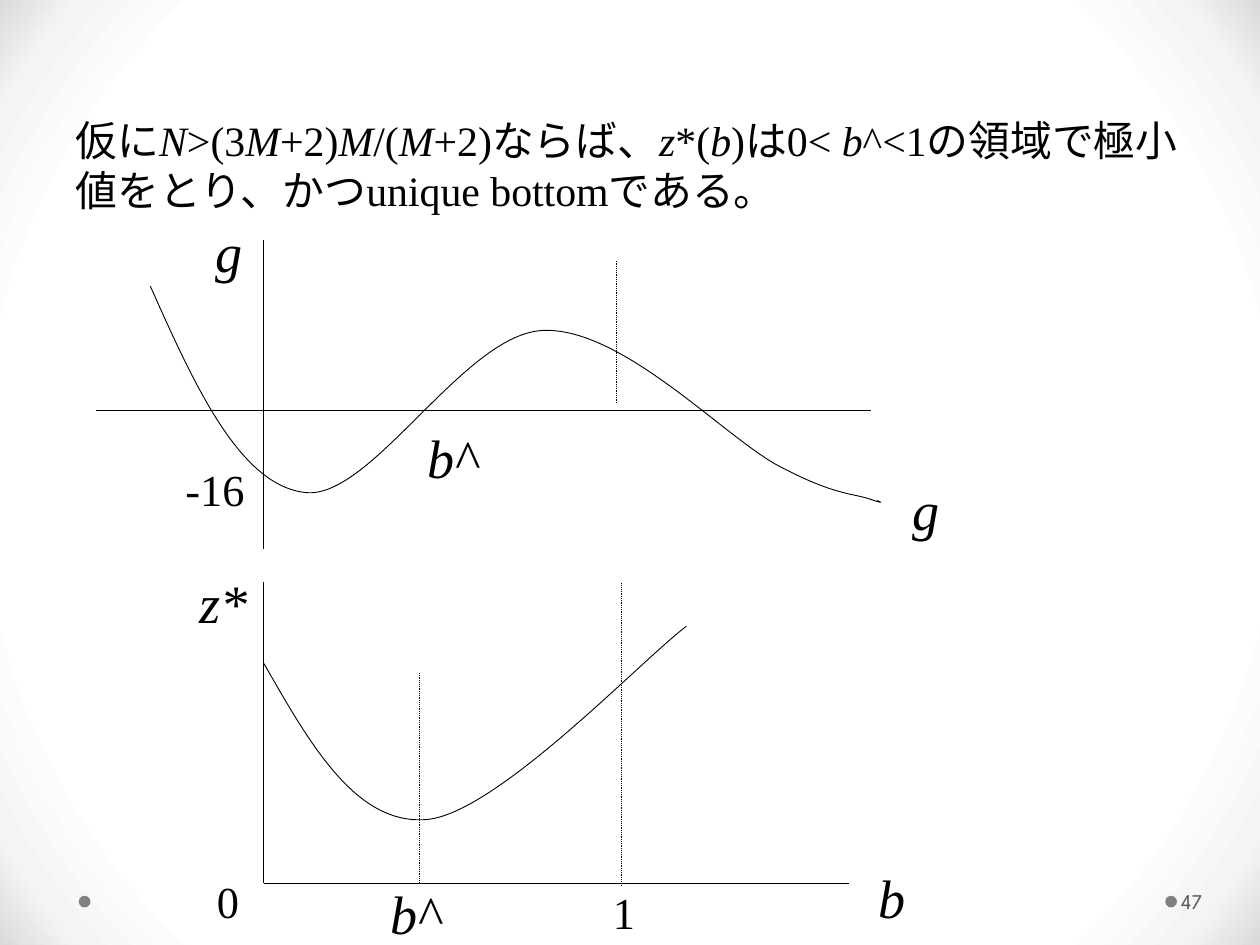
from dataclasses import dataclass

from lxml import etree
from pptx import Presentation
from pptx.dml.color import RGBColor
from pptx.enum import dml, shapes, text
from pptx.oxml import parse_xml
from pptx.oxml.ns import nsdecls, qn
from pptx.util import Pt


@dataclass(frozen=True)
class Theme:
    font: str = "Times New Roman"
    number_font: str = "League Spartan"
    ink: RGBColor = RGBColor(0, 0, 0)
    dot: RGBColor = RGBColor(0x80, 0x80, 0x80)
    number: RGBColor = RGBColor(0x59, 0x59, 0x59)
    # Position, colour and opacity, in percent, from the centre outwards.
    backdrop: tuple = ((80, "FFFFFF", 74), (92, "F4F4F4", 100), (100, "DADADA", 100))
    body_size: int = 34
    variable_size: int = 44
    value_size: int = 36
    number_size: int = 17
    line_width: float = 0.75


THEME = Theme()

# Underscores switch italics on and off.
STATEMENT = ("仮に_N_>(3_M_+2)_M_/(_M_+2)ならば、_z_*(_b_)は0< _b_^<1の領域で"
             "極小値をとり、かつunique bottomである。")

AXIS_X = 214.5
# Each curve is a start point followed by three points per cubic Bézier segment.
G_GRAPH = {
    "axes": [(78.2, 333.8, 707.8, 333.8), (AXIS_X, 195, AXIS_X, 446.5)],
    "guides": [(501, 212, 501, 328)],
    "curve": [
        (122.2, 232.6),
        (158.4, 313.9), (195.1, 394.6), (248.4, 400.3),
        (301.7, 406.1), (376.6, 272.2), (440.6, 268.6),
        (505.4, 265), (590.4, 357.1), (634.3, 379.4),
        (678.2, 402.5), (693.4, 401), (706.3, 405.4),
        (719.3, 409.7), (716.4, 408.2), (712.8, 406.8),
    ],
}
Z_GRAPH = {
    "axes": [(AXIS_X, 473, AXIS_X, 717.8), (AXIS_X, 717.8, 689.8, 717.8)],
    "guides": [(505.2, 474.2, 505.2, 719), (340.5, 547, 340.5, 717.8)],
    "curve": [
        (AXIS_X, 539.3),
        (252, 604.8), (289.4, 671), (347, 666),
        (403.9, 661), (522.7, 535), (557.8, 509),
    ],
}
VARIABLES = [("g", 168, 173.8, 36.5), ("b^", 340.2, 341, 55.5),
             ("g", 734.6, 384, 36.5), ("z*", 155, 459.5, 54),
             ("b^", 310, 712, 55.5), ("b", 707, 699, 36.5)]
VALUES = [("-16", 143.2, 372, 63), ("0", 169, 707, 32.5), ("1", 490.8, 716.2, 32.5)]


def set_backdrop(s):
    stops = "".join(
        f'<a:gs pos="{pos * 1000}"><a:srgbClr val="{color}">'
        f'<a:alpha val="{opacity * 1000}"/></a:srgbClr></a:gs>'
        for pos, color, opacity in THEME.backdrop)
    s._element.cSld.insert(0, parse_xml(
        f'<p:bg {nsdecls("p", "a")}><p:bgPr><a:gradFill rotWithShape="1">'
        f'<a:gsLst>{stops}</a:gsLst><a:path path="circle">'
        '<a:fillToRect l="50000" t="50000" r="50000" b="50000"/></a:path>'
        '</a:gradFill><a:effectLst/></p:bgPr></p:bg>'))


def style_line(line):
    line.color.rgb = THEME.ink
    line.width = Pt(THEME.line_width)


def add_line(group, ends, dotted=False):
    line = group.shapes.add_connector(shapes.MSO_CONNECTOR.STRAIGHT, *map(Pt, ends))
    style_line(line.line)
    if dotted:
        line.line.dash_style = dml.MSO_LINE.ROUND_DOT
    etree.SubElement(line._element.spPr, qn("a:effectLst"))


def add_curve(group, points):
    """Build the control polygon, then join each three points into a Bézier."""
    start, *controls = [tuple(map(Pt, point)) for point in points]
    builder = group.shapes.build_freeform(*start)
    builder.add_line_segments(controls, close=False)
    sp = builder.convert_to_shape()
    sides = list(sp._element.iter(qn("a:lnTo")))
    for first, *others in zip(sides[::3], sides[1::3], sides[2::3]):
        first.tag = qn("a:cubicBezTo")
        for side in others:
            first.append(side[0])
            side.getparent().remove(side)
    sp.shadow.inherit = False
    sp.fill.background()
    style_line(sp.line)


def add_graph(s, graph):
    group = s.shapes.add_group_shape()
    for ends in graph["axes"]:
        add_line(group, ends)
    add_curve(group, graph["curve"])
    for ends in graph["guides"]:
        add_line(group, ends, dotted=True)


def add_dot(s, left):
    sp = s.shapes.add_shape(shapes.MSO_SHAPE.OVAL, Pt(left), Pt(728), Pt(9.5), Pt(9.5))
    sp.shadow.inherit = False
    sp.fill.solid()
    sp.fill.fore_color.rgb = THEME.dot
    sp.line.fill.background()


def set_font(font, size, name=THEME.font, color=THEME.ink):
    font.size = Pt(size)
    font.name = name
    font.color.rgb = color


def add_box(s, box, margins):
    """Add a wrapping text box; margins are left, top, right, bottom."""
    tf = s.shapes.add_textbox(*map(Pt, box)).text_frame
    tf.word_wrap = True
    tf.margin_left, tf.margin_top, tf.margin_right, tf.margin_bottom = map(Pt, margins)
    return tf


def add_statement(s):
    p = add_box(s, (51.2, 88, 921.6, 507), (10.2, 5, 10.2, 5)).paragraphs[0]
    set_font(p.font, THEME.body_size)
    for i, part in enumerate(STATEMENT.split("_")):
        r = p.add_run()
        r.text = part
        r.font.italic = i % 2 == 1


def add_label(s, label, left, top, width, size, italic=False):
    sp = s.shapes.add_textbox(Pt(left), Pt(top), Pt(width), Pt(size * 1.15 + 10))
    tf = sp.text_frame
    tf.word_wrap = False
    tf.auto_size = text.MSO_AUTO_SIZE.SHAPE_TO_FIT_TEXT
    p = tf.paragraphs[0]
    p.text = label
    p.alignment = text.PP_ALIGN.CENTER
    set_font(p.font, size)
    p.font.italic = italic


def add_slide_number(s, number):
    tf = add_box(s, (956.8, 712, 62.5, 41), (3, 5, 5, 5))
    tf.vertical_anchor = text.MSO_ANCHOR.MIDDLE
    p = tf.paragraphs[0]
    p.text = number
    set_font(p.font, THEME.number_size, THEME.number_font, THEME.number)


def main():
    prs = Presentation()
    prs.slide_width, prs.slide_height = Pt(1024), Pt(768)
    s = prs.slides.add_slide(prs.slide_layouts[6])
    set_backdrop(s)
    for left in (947, 64):
        add_dot(s, left)
    add_statement(s)
    add_slide_number(s, "47")
    for graph in (G_GRAPH, Z_GRAPH):
        add_graph(s, graph)
    for label in VARIABLES:
        add_label(s, *label, THEME.variable_size, italic=True)
    for label in VALUES:
        add_label(s, *label, THEME.value_size)
    prs.save("out.pptx")


if __name__ == "__main__":
    main()
